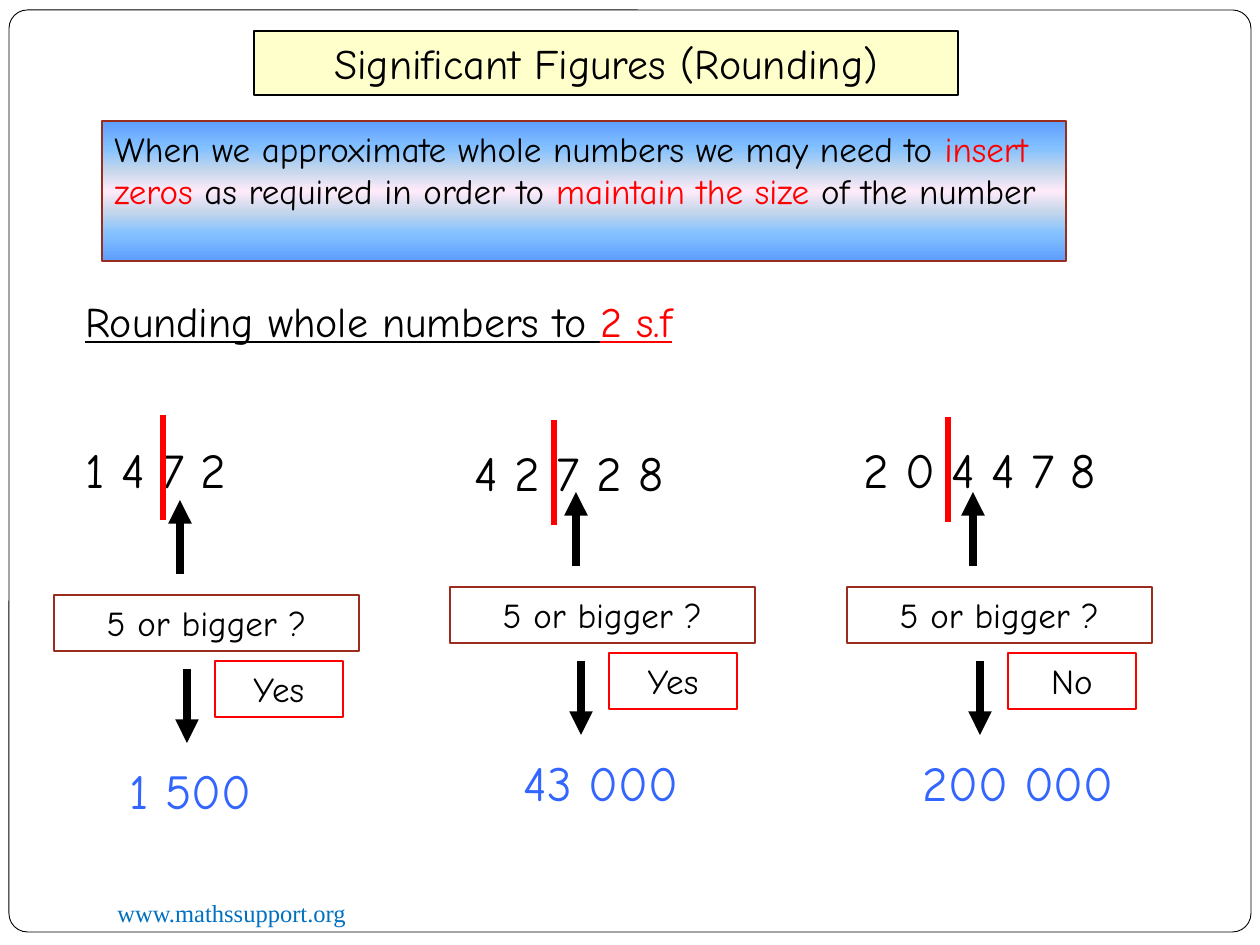
import dataclasses

import lxml.etree
import pptx
import pptx.dml.color
import pptx.enum.shapes
import pptx.enum.text
import pptx.oxml.ns
import pptx.util

RGB = pptx.dml.color.RGBColor
SHAPES = pptx.enum.shapes.MSO_SHAPE
ALIGN = pptx.enum.text.PP_ALIGN

BLACK = RGB(0x00, 0x00, 0x00)
WHITE = RGB(0xFF, 0xFF, 0xFF)
RED = RGB(0xFF, 0x00, 0x00)
BROWN = RGB(0x9B, 0x2D, 0x1F)
CREAM = RGB(0xFF, 0xFF, 0xCC)
ANSWER_BLUE = RGB(0x33, 0x66, 0xFF)
SITE_BLUE = RGB(0x00, 0x70, 0xC0)
DEEP_SKY = RGB(0x5E, 0x9E, 0xFF)
SKY = RGB(0x85, 0xC2, 0xFF)
MIST = RGB(0xC4, 0xD6, 0xEB)
BLUSH = RGB(0xFF, 0xEB, 0xFA)
RULE_STOPS = [(0, DEEP_SKY), (20, SKY), (35, MIST), (50, BLUSH),
              (65, MIST), (80, SKY), (100, DEEP_SKY)]

PX_PER_INCH = 126
FONT = "Comic Neue"


@dataclasses.dataclass
class Example:
    """One worked rounding, with the places of its parts."""
    digits: str
    digits_at: tuple
    cut_at: tuple
    question_at: tuple
    verdict: str
    verdict_left: int
    answer: str


EXAMPLES = [
    Example("1 4 7 2", (73, 433), (163, 415), (54, 595), "Yes", 215, " 1 500"),
    Example(" 4 2 7 2 8", (446, 436), (554, 420), (450, 587), "Yes", 609, " 43 000"),
    Example("2 0 4 4 7 8", (851, 433), (948, 417), (847, 587), "No", 1008, " 200 000"),
]


def px(length):
    """Turn px into EMU."""
    return pptx.util.Emu(round(length * 914400 / PX_PER_INCH))


def add_child(parent, tag, **attributes):
    """Append a drawing element to a parent element."""
    return lxml.etree.SubElement(parent, pptx.oxml.ns.qn(tag), attributes)


def write(box, spans, size, align=ALIGN.LEFT, font=FONT, underline=None):
    """Write one paragraph of (text, colour) spans in a box."""
    frame = box.text_frame
    frame.word_wrap = True
    frame.auto_size = pptx.enum.text.MSO_AUTO_SIZE.NONE
    frame.vertical_anchor = pptx.enum.text.MSO_ANCHOR.TOP
    para = frame.paragraphs[0]
    para.alignment = align
    para.space_before = pptx.util.Pt(0)
    for text, color in spans:
        span = para.add_run()
        span.text = text
        span.font.name = font
        span.font.size = pptx.util.Pt(size)
        span.font.bold = False
        span.font.underline = underline
        span.font.color.rgb = color


def add_text(page, left, top, width, height, spans, size, **style):
    """Add a plain text box."""
    box = page.shapes.add_textbox(px(left), px(top), px(width), px(height))
    write(box, spans, size, **style)
    return box


def add_panel(page, left, top, width, height, line, weight=0.75, kind=SHAPES.RECTANGLE):
    """Add an outlined, unfilled shape."""
    panel = page.shapes.add_shape(kind, px(left), px(top), px(width), px(height))
    panel.shadow.inherit = False
    panel.fill.background()
    panel.line.color.rgb = line
    panel.line.width = pptx.util.Pt(weight)
    return panel


def add_label(page, left, top, width, text, line):
    """Add a framed, centred label."""
    label = add_panel(page, left, top, width, 56, line)
    write(label, [(text, BLACK)], 20, align=ALIGN.CENTER)


def add_line(page, x, start, end, color, weight, arrow=False):
    """Add an upright line, with an arrowhead at its end if wanted."""
    line = page.shapes.add_connector(
        pptx.enum.shapes.MSO_CONNECTOR.STRAIGHT, px(x), px(start), px(x), px(end))
    line.line.color.rgb = color
    line.line.width = pptx.util.Pt(weight)
    if arrow:
        add_child(line.line._get_or_add_ln(), "a:tailEnd", type="triangle")
    add_child(line.element.spPr, "a:effectLst")


def fill_gradient(shape, stops):
    """Fill a shape from top to bottom with (percent, colour) stops."""
    shape.fill.gradient()
    shape.fill.gradient_angle = 270
    stop_list = shape.element.spPr.find(".//" + pptx.oxml.ns.qn("a:gsLst"))
    for stop in list(stop_list):
        stop_list.remove(stop)
    for percent, color in stops:
        stop = add_child(stop_list, "a:gs", pos=str(percent * 1000))
        add_child(stop, "a:srgbClr", val=str(color))


def add_frame(page):
    """Add the rounded page frame behind everything else."""
    frame = add_panel(page, 9, 10, 1242, 922, BLACK, 0.5, SHAPES.ROUNDED_RECTANGLE)
    frame.adjustments[0] = 0.02
    frame.fill.solid()
    frame.fill.fore_color.rgb = WHITE
    page.shapes.element.insert(2, frame.element)


def add_title(page, text):
    """Place and format the title placeholder."""
    title = page.shapes.title
    title.left, title.top, title.width, title.height = px(254), px(31), px(704), px(64)
    title.fill.solid()
    title.fill.fore_color.rgb = CREAM
    title.line.color.rgb = BLACK
    title.line.width = pptx.util.Pt(0.75)
    write(title, [(text, BLACK)], 24, align=ALIGN.CENTER)


def add_rule(page):
    """Add the gradient panel that states the rule."""
    panel = add_panel(page, 102, 121, 964, 140, BROWN)
    fill_gradient(panel, RULE_STOPS)
    write(panel, [
        ("When we approximate whole numbers we may need to ", BLACK),
        ("insert zeros", RED),
        (" as required in order to ", BLACK),
        ("maintain the size", RED),
        (" of the number", BLACK),
    ], 20)


def add_example(page, example):
    """Add one column from its digits down to the rounded answer."""
    left, top = example.question_at
    verdict_left = example.verdict_left
    cut_x, cut_top = example.cut_at
    add_text(page, *example.digits_at, 305, 72, [(example.digits, BLACK)], 28)
    add_line(page, cut_x, cut_top, cut_top + 105, RED, 3)
    add_label(page, left, top, 305, "5 or bigger ?", BROWN)
    add_line(page, left + 126, top - 21, top - 95, BLACK, 4.5, arrow=True)
    add_line(page, verdict_left - 28, top + 74, top + 148, BLACK, 4.5, arrow=True)
    add_text(page, verdict_left - 114, top + 159, 265, 72,
             [(example.answer, ANSWER_BLUE)], 28)
    add_label(page, verdict_left, top + 66, 128, example.verdict, RED)


def main():
    """Build and save the slide."""
    deck = pptx.Presentation()
    deck.slide_width, deck.slide_height = px(1260), px(945)
    page = deck.slides.add_slide(deck.slide_layouts.get_by_name("Title Only"))
    add_frame(page)
    add_title(page, "Significant Figures (Rounding)")
    add_text(page, 105, 892, 410, 43, [("www.mathssupport.org", SITE_BLUE)], 14,
             font="Times New Roman")
    add_rule(page)
    add_text(page, 73, 289, 696, 63,
             [("Rounding whole numbers to ", BLACK), ("2 s.f", RED)], 24, underline=True)
    for example in EXAMPLES:
        add_example(page, example)
    deck.save("out.pptx")


if __name__ == "__main__":
    main()
